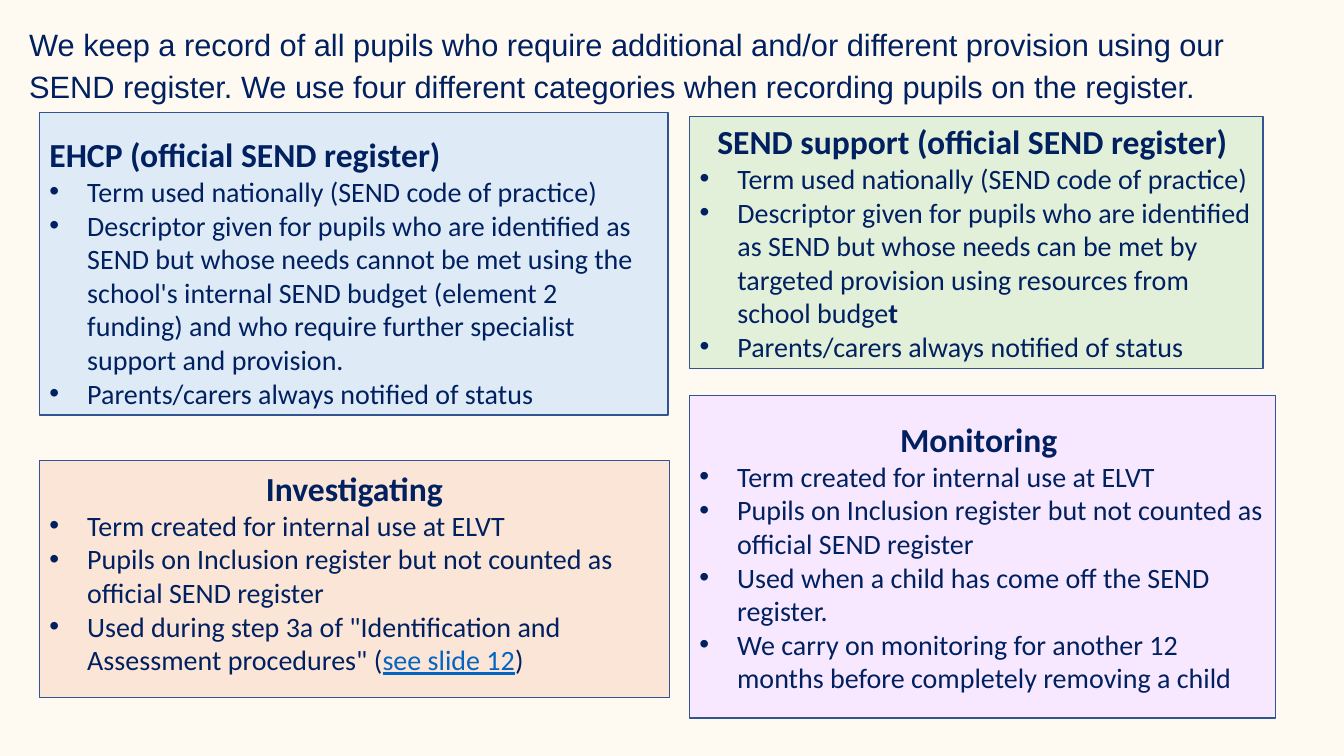
"""Build a slide describing the four categories of the SEND register."""
from dataclasses import dataclass

from lxml import etree
from pptx import Presentation
from pptx import util as u
from pptx.dml import color as c
from pptx.enum import text as t
from pptx.oxml import ns


@dataclass(frozen=True)
class Theme:
    background: str = "FFFAF1"
    ink: str = "002060"
    link: str = "0563C1"
    border: str = "325491"
    blue: str = "DEEBF7"
    green: str = "E2F0D9"
    orange: str = "FBE5D6"
    purple: str = "F7E8FF"
    title_font: str = "Arial"
    body_font: str = "Calibri"
    title_size: int = 22
    heading_size: int = 24
    list_size: int = 20


theme = Theme()


def add_run(paragraph, text, font=theme.body_font, size=theme.list_size,
            color=theme.ink, bold=False, underline=False):
    run = paragraph.add_run()
    run.text = text
    run.font.name = font
    run.font.size = u.Pt(size)
    run.font.color.rgb = c.RGBColor.from_string(color)
    run.font.bold = bold
    run.font.underline = underline


def place(shape, left, top, width, height):
    shape.left, shape.top = u.Pt(left), u.Pt(top)
    shape.width, shape.height = u.Pt(width), u.Pt(height)
    frame = shape.text_frame
    frame.word_wrap = True
    frame.auto_size = t.MSO_AUTO_SIZE.NONE
    frame.vertical_anchor = t.MSO_ANCHOR.TOP
    frame.margin_left = frame.margin_right = u.Pt(7.2)
    frame.margin_top = frame.margin_bottom = u.Pt(3.6)
    return frame


presentation = Presentation()
presentation.slide_width = u.Pt(960)
presentation.slide_height = u.Pt(540)
slide = presentation.slides.add_slide(presentation.slide_layouts.get_by_name("Comparison"))
slide.background.fill.solid()
slide.background.fill.fore_color.rgb = c.RGBColor.from_string(theme.background)

title_paragraph = place(slide.shapes.title, 13.7, 10.5, 932.4, 66.2).paragraphs[0]
title_paragraph.alignment = t.PP_ALIGN.LEFT
title_paragraph.line_spacing = 1.15
title_paragraph.space_after = u.Pt(6)
add_run(title_paragraph,
        "We keep a record of all pupils who require additional and/or different provision "
        "using our SEND register. We use four different categories when recording pupils "
        "on the register. ",
        font=theme.title_font, size=theme.title_size)

national_term = [("Term used nationally (SEND code of practice)", {})]
internal_term = [("Term created for internal use at ELVT", {})]
notified = [("Parents/carers always notified of status", {})]
not_counted = [("Pupils on Inclusion register but not counted as official SEND register", {})]

categories = [
    ("EHCP (official SEND register)", t.PP_ALIGN.LEFT, theme.blue,
     (28.1, 80.4, 449, 216), 15.4, [
         national_term,
         [("Descriptor given for pupils who are identified as SEND but whose needs cannot be "
           "met using the school's internal SEND budget (element 2 funding) and who require "
           "further specialist support and provision.", {})],
         notified]),
    ("SEND support (official SEND register) ", t.PP_ALIGN.CENTER, theme.green,
     (492.5, 83.2, 409.7, 180), 3.3, [
         national_term,
         [("Descriptor given for pupils who are identified as SEND but whose needs can be met "
           "by targeted provision using resources from school budge", {}),
          ("t", {"bold": True})],
         notified]),
    ("Investigating", t.PP_ALIGN.CENTER, theme.orange,
     (28.1, 329, 450, 169.2), 5.2, [
         internal_term,
         not_counted,
         [('Used during step 3a of "Identification and Assessment procedures" (', {}),
          ("see slide 12", {"color": theme.link, "underline": True}),
          (") ", {})]]),
    ("Monitoring ", t.PP_ALIGN.CENTER, theme.purple,
     (492.3, 282.4, 419, 230.4), 16.8, [
         internal_term,
         not_counted,
         [("Used when a child has come off the SEND register.", {})],
         [("We carry on monitoring for another 12 months before completely removing a child",
           {})]]),
]

for index, (heading, alignment, fill, bounds, top_margin, items) in enumerate(categories, 1):
    box = slide.placeholders[index]
    frame = place(box, *bounds)
    frame.margin_top = u.Pt(top_margin)
    frame.margin_bottom = 0
    box.fill.solid()
    box.fill.fore_color.rgb = c.RGBColor.from_string(fill)
    box.line.color.rgb = c.RGBColor.from_string(theme.border)
    box.line.width = u.Pt(1)

    heading_paragraph = frame.paragraphs[0]
    heading_paragraph.alignment = alignment
    heading_paragraph.space_before = u.Pt(0)
    add_run(heading_paragraph, heading, size=theme.heading_size, bold=True)
    properties = heading_paragraph._p.get_or_add_pPr()
    properties.set("marL", "0")
    properties.set("indent", "0")
    etree.SubElement(properties, ns.qn("a:buNone"))

    for runs in items:
        paragraph = frame.add_paragraph()
        paragraph.alignment = t.PP_ALIGN.LEFT
        paragraph.space_before = u.Pt(0)
        for text, style in runs:
            add_run(paragraph, text, **style)
        properties = paragraph._p.get_or_add_pPr()
        properties.set("marL", str(u.Pt(27)))
        properties.set("indent", str(u.Pt(-27)))
        etree.SubElement(properties, ns.qn("a:buFont"), typeface=theme.title_font)
        etree.SubElement(properties, ns.qn("a:buChar"), char="•")

presentation.save("out.pptx")
